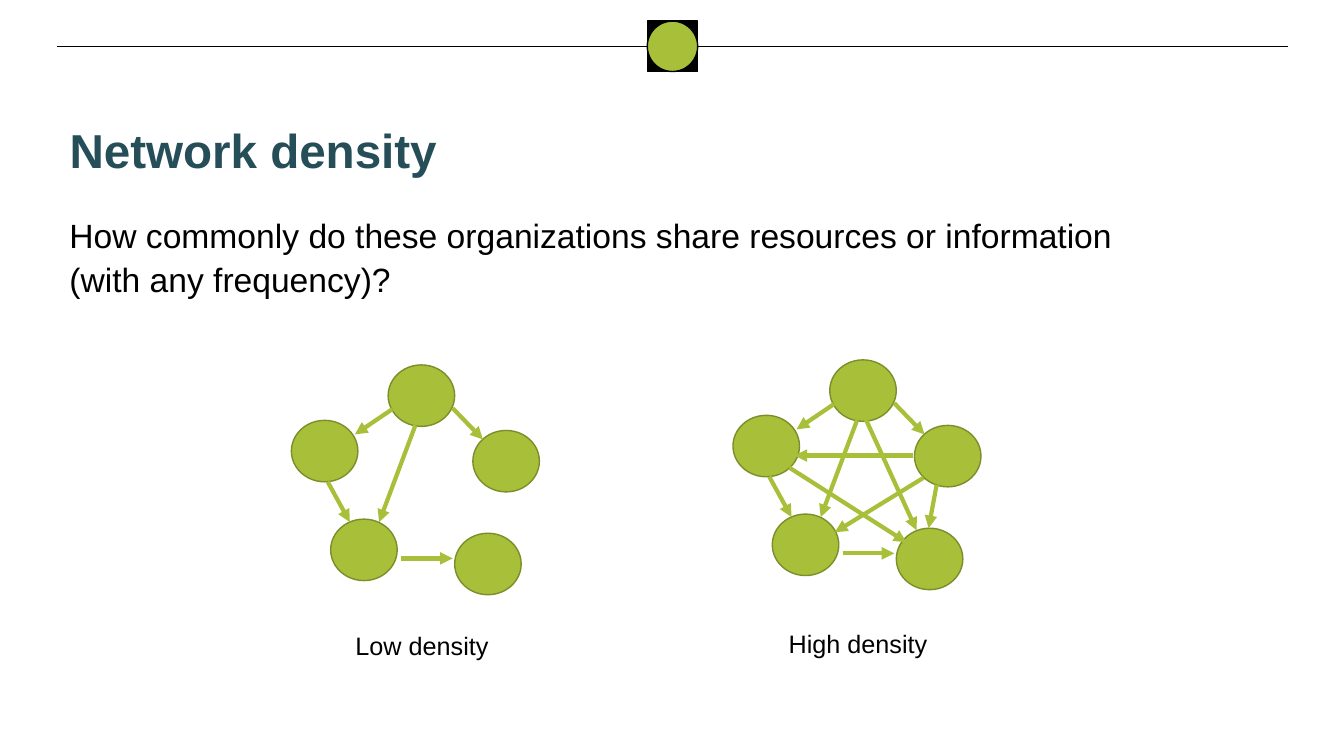
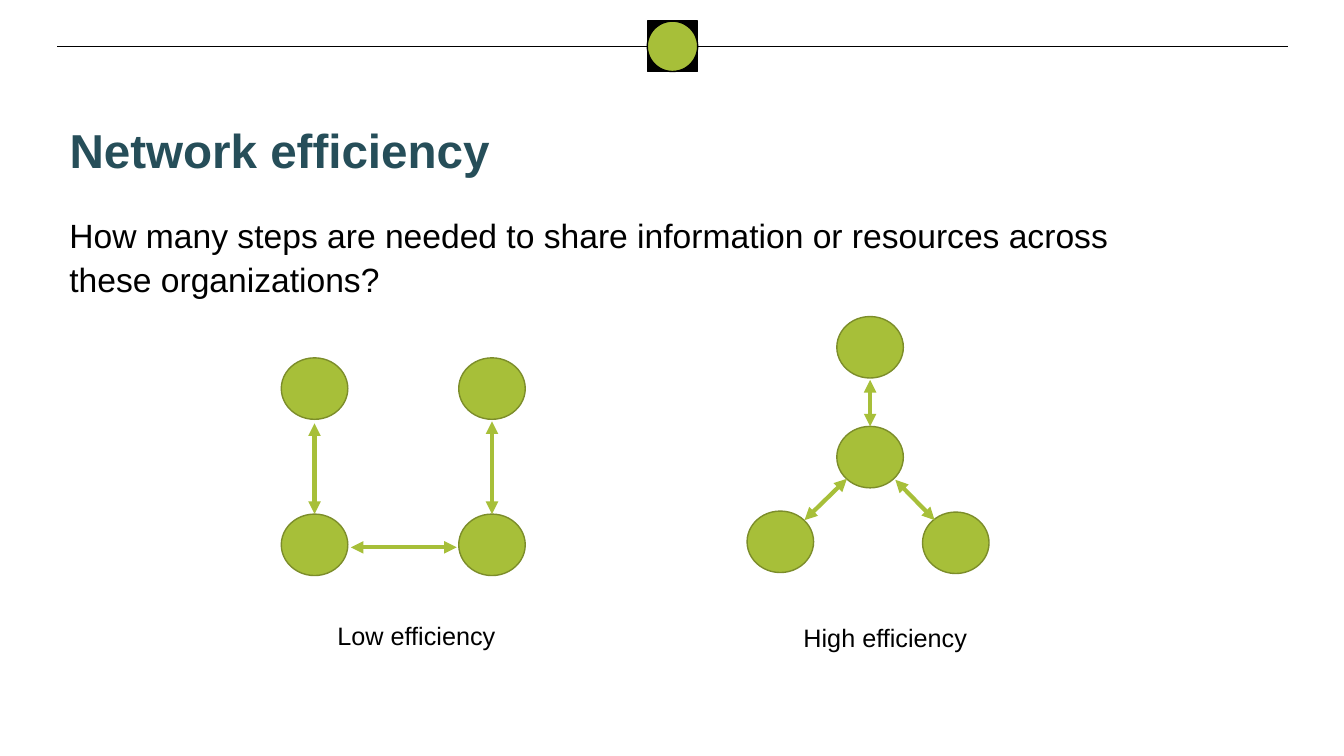
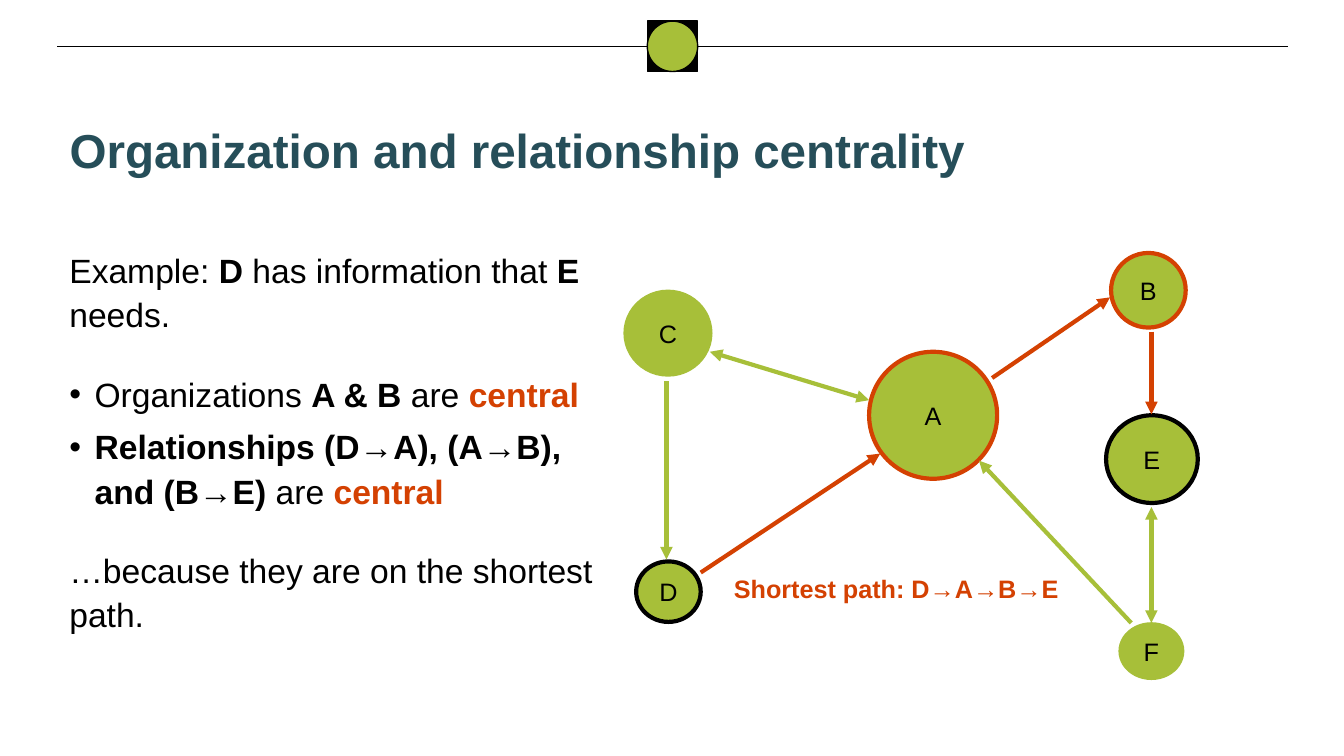
from lxml.etree import SubElement
from pptx import Presentation
from pptx.dml.color import RGBColor
from pptx.enum.shapes import MSO_CONNECTOR, MSO_SHAPE
from pptx.enum.text import MSO_ANCHOR, PP_ALIGN
from pptx.oxml.ns import qn
from pptx.util import Inches, Pt

BLACK = RGBColor(0x00, 0x00, 0x00)
TEAL = RGBColor(0x26, 0x4E, 0x59)
GREEN = RGBColor(0xA7, 0xBF, 0x39)
OLIVE = RGBColor(0x7C, 0x8D, 0x2A)
ORANGE = RGBColor(0xD4, 0x41, 0x02)
FONT = "Arial"
NODE_WIDTH, NODE_HEIGHT = 0.66, 0.61
SHIFT_X, SHIFT_Y = 4.38, -0.05


def add_runs(paragraph, runs, size):
    for text, color, bold in runs:
        run = paragraph.add_run()
        run.text = text
        run.font.name = FONT
        run.font.size = Pt(size)
        run.font.bold = bold
        run.font.color.rgb = color


def add_line(slide, points, color, width, ends=()):
    line = slide.shapes.add_connector(MSO_CONNECTOR.STRAIGHT, *map(Inches, points))
    line.line.color.rgb = color
    line.line.width = Pt(width)
    properties = line.element.spPr
    for end in ends:
        SubElement(properties.find(qn("a:ln")), qn(f"a:{end}"), type="triangle")
    SubElement(properties, qn("a:effectLst"))
    return line


ONE_WAY = ("tailEnd",)
TWO_WAY = ("headEnd", "tailEnd")

low_nodes = [(2.89, 4.17), (3.28, 5.15), (3.85, 3.62), (4.69, 4.27), (4.51, 5.29)]
high_nodes = [(left + SHIFT_X, top + SHIFT_Y) for left, top in low_nodes]
low_arrows = [
    (3.89, 4.06, 3.52, 4.31), (4.49, 4.05, 4.79, 4.36), (3.25, 4.78, 3.47, 5.18),
    (3.98, 5.54, 4.49, 5.54), (4.12, 4.22, 3.76, 5.18),
]
high_arrows = [
    (x1 + SHIFT_X, y1 + SHIFT_Y, x2 + SHIFT_X, y2 + SHIFT_Y)
    for x1, y1, x2, y2 in low_arrows
] + [
    (8.56, 4.1, 9.09, 5.26), (9.06, 4.52, 7.88, 4.52), (9.29, 4.81, 9.21, 5.24),
    (9.16, 4.74, 8.28, 5.28), (7.83, 4.64, 8.99, 5.38),
]
chain_nodes = [(left, top) for left in (2.79, 4.55) for top in (5.1, 3.55)]
hub_nodes = [(7.41, 5.07), (8.3, 3.14), (9.15, 5.08), (8.3, 4.23)]
efficiency_arrows = [
    (4.53, 5.43, 3.48, 5.43), (3.12, 4.2, 3.12, 5.1), (4.88, 4.18, 4.88, 5.1),
    (8.63, 3.77, 8.63, 4.23), (8.4, 4.75, 7.98, 5.16), (8.88, 4.76, 9.27, 5.16),
]

slides = [
    {
        "title": "Network density",
        "body": (2.04, 10.82),
        "paragraphs": [
            (False, 6, [("How commonly do these organizations share resources or "
                         "information (with any frequency)?", BLACK, False)]),
        ],
        "nodes": [(left, top, NODE_WIDTH, NODE_HEIGHT, "", OLIVE, 1)
                  for left, top in low_nodes + high_nodes],
        "arrows": [(points, GREEN, ONE_WAY) for points in low_arrows + high_arrows],
        "captions": [
            (2.74, 6.2, 2.89, "Low density", BLACK, False, PP_ALIGN.CENTER),
            (7.61, 6.18, 1.8, "High density", BLACK, False, PP_ALIGN.CENTER),
        ],
    },
    {
        "title": "Network efficiency",
        "body": (2.04, 10.82),
        "paragraphs": [
            (False, 6, [("How many steps are needed to share information or "
                         "resources across these organizations?", BLACK, False)]),
        ],
        "nodes": [(left, top, NODE_WIDTH, NODE_HEIGHT, "", OLIVE, 1)
                  for left, top in chain_nodes + hub_nodes],
        "arrows": [(points, GREEN, TWO_WAY) for points in efficiency_arrows],
        "captions": [
            (2.76, 6.11, 2.74, "Low efficiency", BLACK, False, PP_ALIGN.CENTER),
            (7.41, 6.12, 2.74, "High efficiency", BLACK, False, PP_ALIGN.CENTER),
        ],
    },
    {
        "title": "Organization and relationship centrality",
        "body": (2.39, 5.44),
        "paragraphs": [
            (False, 25, [("Example: ", BLACK, False), ("D", BLACK, True),
                         (" has information that ", BLACK, False),
                         ("E", BLACK, True), (" needs.", BLACK, False)]),
            (True, 6, [("Organizations ", BLACK, False), ("A & B", BLACK, True),
                       (" are ", BLACK, False), ("central", ORANGE, True)]),
            (True, 25, [("Relationships (D→A), (A→B), and (B→E)", BLACK, True),
                        (" are ", BLACK, False), ("central", ORANGE, True)]),
            (False, 6, [("…because they are on the shortest path.", BLACK, False)]),
        ],
        "nodes": [
            (8.62, 3.49, 1.27, 1.26, "A", ORANGE, 3),
            (11.02, 2.51, 0.74, 0.74, "B", ORANGE, 3),
            (6.31, 5.57, 0.64, 0.6, "D", BLACK, 3),
            (6.19, 2.88, 0.87, 0.85, "C", GREEN, 1),
            (10.97, 4.12, 0.91, 0.87, "E", BLACK, 3),
            (11.1, 6.18, 0.64, 0.56, "F", GREEN, 1),
        ],
        "arrows": [
            ((6.61, 3.78, 6.61, 5.55), GREEN, ONE_WAY),
            ((8.62, 3.97, 7.04, 3.49), GREEN, TWO_WAY),
            ((11.22, 6.18, 9.71, 4.57), GREEN, ONE_WAY),
            ((11.42, 5.03, 11.42, 6.18), GREEN, TWO_WAY),
            ((6.95, 5.68, 8.73, 4.5), ORANGE, ONE_WAY),
            ((9.84, 3.75, 11.01, 2.95), ORANGE, ONE_WAY),
            ((11.42, 3.29, 11.42, 4.11), ORANGE, ONE_WAY),
        ],
        "captions": [
            (7.18, 5.64, 4.39, "Shortest path: D→A→B→E", ORANGE, True, PP_ALIGN.LEFT),
        ],
    },
]

presentation = Presentation()
presentation.slide_width = Inches(13.33)
presentation.slide_height = Inches(7.5)
layout = presentation.slide_layouts[5]

for number, content in enumerate(slides):
    slide = presentation.slides.add_slide(layout)

    if number == 0:
        band = [add_line(slide, (0.57, 0.46, 12.77, 0.46), BLACK, 0.75)]
        for kind, color in ((MSO_SHAPE.RECTANGLE, BLACK), (MSO_SHAPE.OVAL, GREEN)):
            badge = slide.shapes.add_shape(
                kind, Inches(6.42), Inches(0.21), Inches(0.5), Inches(0.5))
            badge.shadow.inherit = False
            badge.fill.solid()
            badge.fill.fore_color.rgb = color
            badge.line.color.rgb = BLACK
            badge.line.width = Pt(1)
            band.append(badge)
        for shape in band:
            layout.shapes.element.append(shape.element)

    title = slide.shapes.title
    title.left, title.top = Inches(0.59), Inches(0.79)
    title.width, title.height = Inches(11.16), Inches(1.45)
    title.text_frame.vertical_anchor = MSO_ANCHOR.MIDDLE
    paragraph = title.text_frame.paragraphs[0]
    paragraph.alignment = PP_ALIGN.LEFT
    paragraph.line_spacing = 0.9
    add_runs(paragraph, [(content["title"], TEAL, True)], 34)

    top, width = content["body"]
    body = slide.shapes.add_textbox(
        Inches(0.59), Inches(top), Inches(width), Inches(4.92))
    body.text_frame.word_wrap = True
    for index, (bulleted, space_after, runs) in enumerate(content["paragraphs"]):
        paragraph = (body.text_frame.add_paragraph() if index
                     else body.text_frame.paragraphs[0])
        paragraph.line_spacing = 1.1
        paragraph.space_after = Pt(space_after)
        add_runs(paragraph, runs, 24)
        if bulleted:
            properties = paragraph._p.get_or_add_pPr()
            properties.set("marL", str(Inches(0.25)))
            properties.set("indent", str(-Inches(0.25)))
            SubElement(properties, qn("a:buFont"), typeface=FONT)
            SubElement(properties, qn("a:buChar"), char="•")

    for left, top, width, height, label, color, line_width in content["nodes"]:
        node = slide.shapes.add_shape(
            MSO_SHAPE.OVAL, Inches(left), Inches(top), Inches(width), Inches(height))
        node.shadow.inherit = False
        node.fill.solid()
        node.fill.fore_color.rgb = GREEN
        node.line.color.rgb = color
        node.line.width = Pt(line_width)
        if label:
            node.text_frame.vertical_anchor = MSO_ANCHOR.MIDDLE
            paragraph = node.text_frame.paragraphs[0]
            paragraph.alignment = PP_ALIGN.CENTER
            add_runs(paragraph, [(label, BLACK, False)], 18)

    for points, color, ends in content["arrows"]:
        add_line(slide, points, color, 3, ends)

    for left, top, width, text, color, bold, alignment in content["captions"]:
        caption = slide.shapes.add_textbox(
            Inches(left), Inches(top), Inches(width), Inches(0.4))
        caption.text_frame.word_wrap = True
        paragraph = caption.text_frame.paragraphs[0]
        paragraph.alignment = alignment
        add_runs(paragraph, [(text, color, bold)], 18)

presentation.save("out.pptx")
